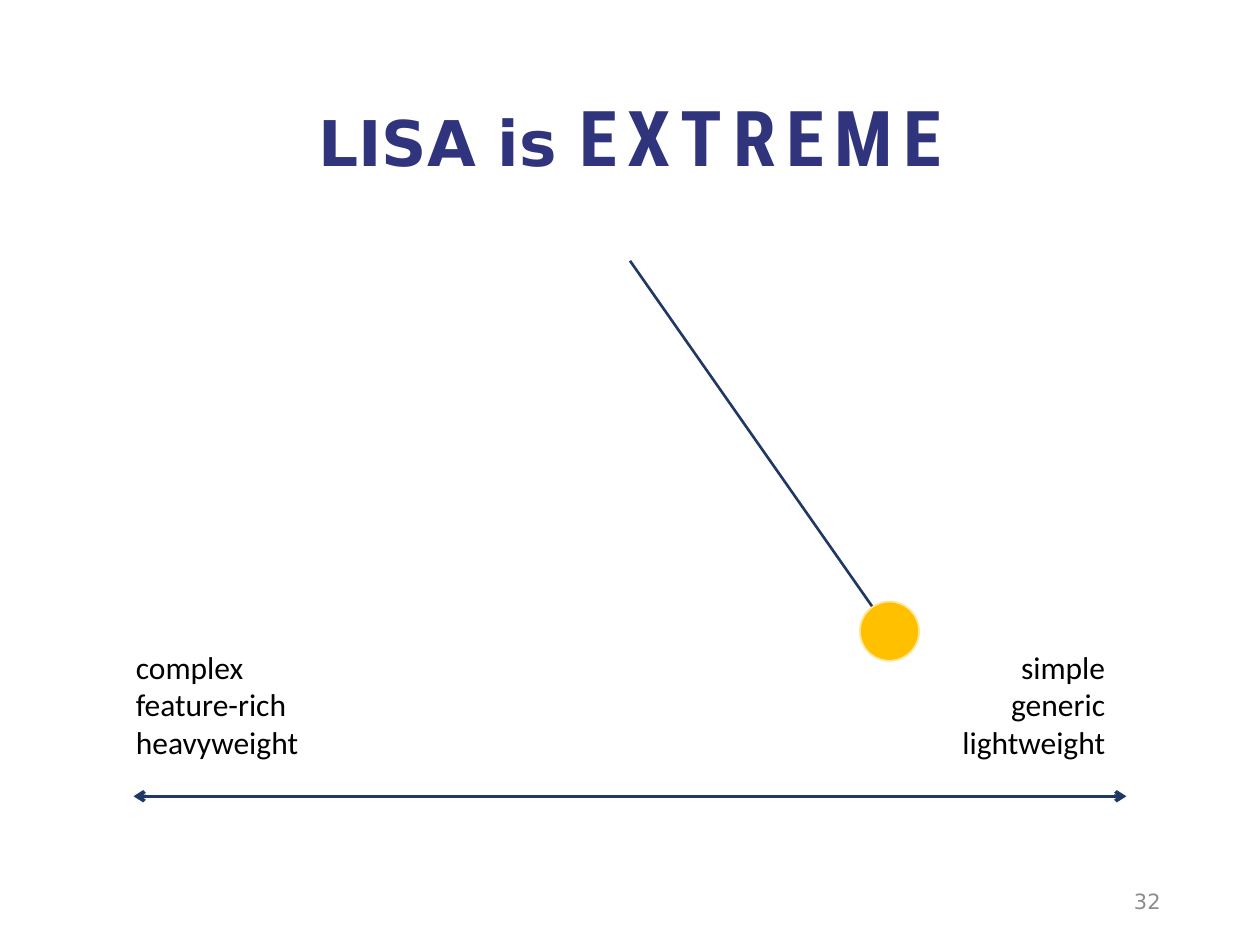
from lxml import etree
from pptx import Presentation
from pptx.dml.color import RGBColor
from pptx.enum import shapes, text
from pptx.oxml.ns import qn
from pptx.util import Inches, Pt

NAVY = "203864"
LEFT, CENTER, RIGHT = (
    text.PP_ALIGN.LEFT, text.PP_ALIGN.CENTER, text.PP_ALIGN.RIGHT)
TOP, MIDDLE = text.MSO_ANCHOR.TOP, text.MSO_ANCHOR.MIDDLE


def color(value):
    return RGBColor.from_string(value)


def add_text(page, area, paragraphs, align=LEFT, anchor=TOP, wrap=True,
             line_spacing=None):
    """Each paragraph is a list of (words, font name, size, colour, bold)."""
    box = page.shapes.add_textbox(*map(Inches, area))
    frame = box.text_frame
    frame.word_wrap = wrap
    frame.vertical_anchor = anchor
    for index, spans in enumerate(paragraphs):
        para = frame.add_paragraph() if index else frame.paragraphs[0]
        para.alignment = align
        para.line_spacing = line_spacing
        for words, name, size, shade, bold in spans:
            span = para.add_run()
            span.text = words
            formats = {"name": name, "size": Pt(size), "bold": bold}
            for key, value in formats.items():
                setattr(span.font, key, value)
            span.font.color.rgb = color(shade)
    return box


def add_title(page):
    box = add_text(
        page, (0.69, 0.4, 8.62, 1.45),
        [[("LISA is ", "DejaVu Sans", 36, "2F347D", True),
          ("EXTREME", "Roboto Condensed", 44, "2F347D", True)]],
        CENTER, MIDDLE, line_spacing=0.9)
    spaced = box.text_frame.paragraphs[0].runs[-1]
    spaced.font._element.set("spc", "600")


def add_labels(page, area, words, align):
    lines = [[(word, "Calibri", 18, "000000", False)] for word in words]
    box = add_text(page, area, lines, align, wrap=False)
    box.text_frame.auto_size = text.MSO_AUTO_SIZE.SHAPE_TO_FIT_TEXT


def add_line(page, start, end, width, arrows=False):
    line = page.shapes.add_connector(
        shapes.MSO_CONNECTOR.STRAIGHT, *map(Inches, (*start, *end)))
    line.line.color.rgb = color(NAVY)
    line.line.width = Pt(width)
    if arrows:
        outline = line.line._get_or_add_ln()
        for tag in ("a:headEnd", "a:tailEnd"):
            etree.SubElement(outline, qn(tag), type="arrow")
    etree.SubElement(line._element.spPr, qn("a:effectLst"))


def add_ball(page, center, diameter):
    left, top = (place - diameter / 2 for place in center)
    ball = page.shapes.add_shape(
        shapes.MSO_SHAPE.OVAL, *map(Inches, (left, top, diameter, diameter)))
    ball.shadow.inherit = False
    ball.fill.solid()
    ball.fill.fore_color.rgb = color("FFC000")
    ball.line.color.rgb = color("FFE699")
    ball.line.width = Pt(1)


def main():
    deck = Presentation()
    deck.slide_width, deck.slide_height = Inches(10), Inches(7.5)
    page = deck.slides.add_slide(deck.slide_layouts[6])

    add_title(page)
    add_text(page, (7.06, 6.95, 2.25, 0.4),
             [[("32", "DejaVu Sans", 12, "8C8C8C", False)]], RIGHT, MIDDLE)

    add_line(page, (1.06, 6.32), (8.94, 6.32), 2, arrows=True)
    add_labels(page, (0.98, 5.09, 1.51, 1.01),
               ("complex", "feature-rich", "heavyweight"), LEFT)
    add_labels(page, (7.52, 5.09, 1.35, 1.01),
               ("simple", "generic", "lightweight"), RIGHT)

    pivot, weight = (5, 2.07), (7.06, 5.01)
    add_line(page, pivot, weight, 1.5)
    add_ball(page, weight, 0.47)

    deck.save("out.pptx")


if __name__ == "__main__":
    main()
